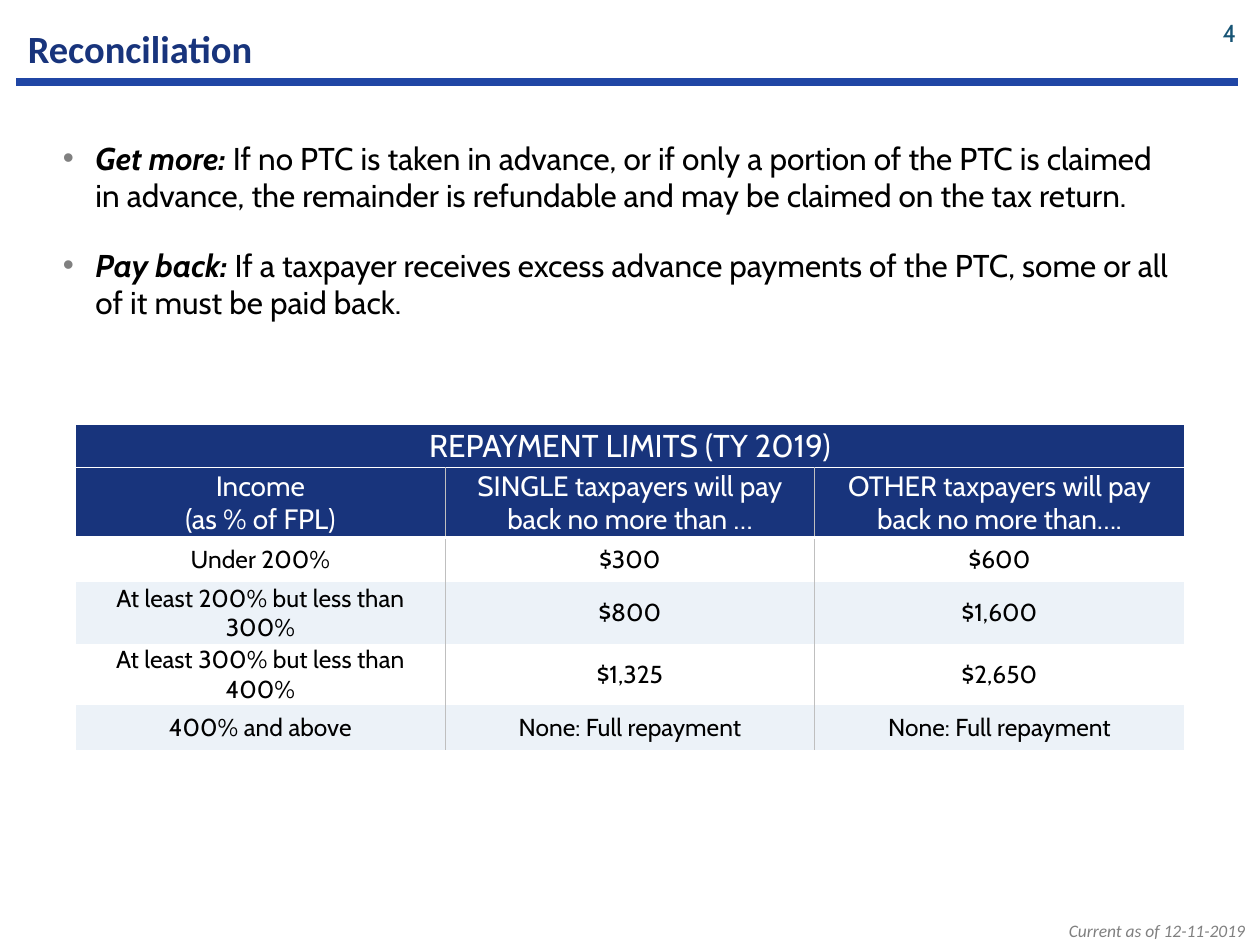
from lxml import etree
from pptx import Presentation
from pptx.dml.color import RGBColor
from pptx.enum.shapes import MSO_CONNECTOR
from pptx.enum.text import MSO_ANCHOR, MSO_AUTO_SIZE, PP_ALIGN
from pptx.oxml.ns import qn
from pptx.util import Pt

CENTER, RIGHT = PP_ALIGN.CENTER, PP_ALIGN.RIGHT
TOP, MIDDLE = MSO_ANCHOR.TOP, MSO_ANCHOR.MIDDLE

COLORS = {"navy": "18347C", "rule": "2046A5", "teal": "175475", "gray": "808080",
          "grid": "BFBFBF", "band": "ECF2F8", "white": "FFFFFF", "black": "000000"}
HEADING_FONT, BODY_FONT = "Calibri", "Cabin"

TITLE = "Reconciliation"
PAGE_NUMBER = "4"
DATE_NOTE = "Current as of 12-11-2019"
BULLETS = [
    ("Get more:", " If no PTC is taken in advance, or if only a portion of the PTC is "
                  "claimed in advance, the remainder is refundable and may be claimed "
                  "on the tax return."),
    ("Pay back:", " If a taxpayer receives excess advance payments of the PTC, some or "
                  "all of it must be paid back."),
]
TABLE_TITLE = "REPAYMENT LIMITS (TY 2019)"
HEADERS = ["Income\n(as % of FPL)",
           "SINGLE taxpayers will pay back no more than …",
           "OTHER taxpayers will pay back no more than…."]
LIMITS = [
    ("Under 200%", "$300", "$600"),
    ("At least 200% but less than 300%", "$800", "$1,600"),
    ("At least 300% but less than 400%", "$1,325", "$2,650"),
    ("400% and above", "None: Full repayment", "None: Full repayment"),
]
TABLE_BOX = (43.2, 242.6, 633.6, 166.3)
ROW_HEIGHTS = [24.8, 34.7] + [25.5] * len(LIMITS)


def color(name):
    return RGBColor.from_string(COLORS[name])


def add_run(p, text, size, color_name, font=BODY_FONT, bold=False, italic=False):
    r = p.add_run()
    r.text = text
    r.font.size, r.font.name = Pt(size), font
    r.font.bold, r.font.italic = bold, italic
    r.font.color.rgb = color(color_name)


def add_text_box(s, box, anchor=TOP):
    tf = s.shapes.add_textbox(*map(Pt, box)).text_frame
    tf.word_wrap = True
    tf.vertical_anchor = anchor
    return tf


def add_bullet(p):
    pPr = p._p.get_or_add_pPr()
    pPr.set("marL", str(Pt(18.72)))
    pPr.set("indent", str(-Pt(18.72)))
    bu_color = etree.SubElement(pPr, qn("a:buClr"))
    etree.SubElement(bu_color, qn("a:srgbClr"), val=COLORS["gray"])
    etree.SubElement(pPr, qn("a:buFont"), typeface="Arial")
    etree.SubElement(pPr, qn("a:buChar"), char="•")


def set_borders(cell, borders):
    """Draw the given sides, {side: (color name, width)}, and clear the others."""
    tcPr = cell._tc.get_or_add_tcPr()
    for side in "LRTB":
        name, width = borders.get(side, (None, 0))
        ln = etree.SubElement(tcPr, qn("a:ln" + side), w=str(Pt(width)))
        if name:
            fill = etree.SubElement(ln, qn("a:solidFill"))
            etree.SubElement(fill, qn("a:srgbClr"), val=COLORS[name])
        else:
            etree.SubElement(ln, qn("a:noFill"))


def fill_cell(cell, text, size, text_color, fill, borders, margins=(2.16, 0.72)):
    set_borders(cell, borders)
    cell.fill.solid()
    cell.fill.fore_color.rgb = color(fill)
    cell.vertical_anchor = MIDDLE
    cell.margin_left = cell.margin_right = Pt(margins[0])
    cell.margin_top = cell.margin_bottom = Pt(margins[1])
    tf = cell.text_frame
    for i, line in enumerate(text.split("\n")):
        p = tf.add_paragraph() if i else tf.paragraphs[0]
        p.alignment = CENTER
        add_run(p, line, size, text_color)


def add_limits_table(s):
    rows = [HEADERS] + LIMITS
    last = len(HEADERS) - 1
    table = s.shapes.add_table(len(rows) + 1, len(HEADERS), *map(Pt, TABLE_BOX)).table
    table.first_row = table.horz_banding = False
    for column in table.columns:
        column.width = Pt(TABLE_BOX[2] / len(HEADERS))
    for row, height in zip(table.rows, ROW_HEIGHTS):
        row.height = Pt(height)

    thin, thick = ("white", 0.5), ("white", 1.5)
    table.cell(0, 0).merge(table.cell(0, last))
    fill_cell(table.cell(0, 0), TABLE_TITLE, 18, "white", "navy", {"B": thin}, (0, 0))
    for i, texts in enumerate(rows, start=1):
        for j, text in enumerate(texts):
            borders = {}
            if j > 0:
                borders["L"] = ("grid", 0.5)
            if j < last:
                borders["R"] = ("grid", 0.5)
            if i == 1:
                borders.update(T=thin, B=thick)
                style = (16, "white", "navy")
            else:
                if i == 2:
                    borders["T"] = thick
                style = (14, "black", "band" if i % 2 else "white")
            fill_cell(table.cell(i, j), text, *style, borders)


def main():
    prs = Presentation()
    prs.slide_width, prs.slide_height = Pt(720), Pt(540)
    s = prs.slides.add_slide(prs.slide_layouts[5])

    p = add_text_box(s, (430, 522, 288.5, 19.4)).paragraphs[0]
    p.alignment = RIGHT
    add_run(p, DATE_NOTE, 10, "gray", HEADING_FONT, italic=True)

    rule = s.shapes.add_connector(MSO_CONNECTOR.STRAIGHT, Pt(9.2), Pt(46.8), Pt(707.5), Pt(46.8))
    rule.line.color.rgb = color("rule")
    rule.line.width = Pt(4.75)
    etree.SubElement(rule._element.spPr, qn("a:effectLst"))

    title = s.shapes.title
    title.left, title.top, title.width, title.height = map(Pt, (8.7, 7.2, 679.7, 41))
    tf = title.text_frame
    tf.auto_size = MSO_AUTO_SIZE.NONE
    tf.vertical_anchor = MIDDLE
    tf.paragraphs[0].alignment = PP_ALIGN.LEFT
    add_run(tf.paragraphs[0], TITLE, 22, "navy", HEADING_FONT, bold=True)

    tf = add_text_box(s, (28.8, 75.6, 648, 383))
    for i, (lead, rest) in enumerate(BULLETS):
        p = tf.add_paragraph() if i else tf.paragraphs[0]
        add_bullet(p)
        if i:
            p.space_before = Pt(18)
        add_run(p, lead, 18, "black", bold=True, italic=True)
        add_run(p, rest, 18, "black")

    p = add_text_box(s, (676.8, 4.3, 36.7, 28.8), MIDDLE).paragraphs[0]
    p.alignment = RIGHT
    add_run(p, PAGE_NUMBER, 14, "teal")

    add_limits_table(s)
    prs.save("out.pptx")


if __name__ == "__main__":
    main()
